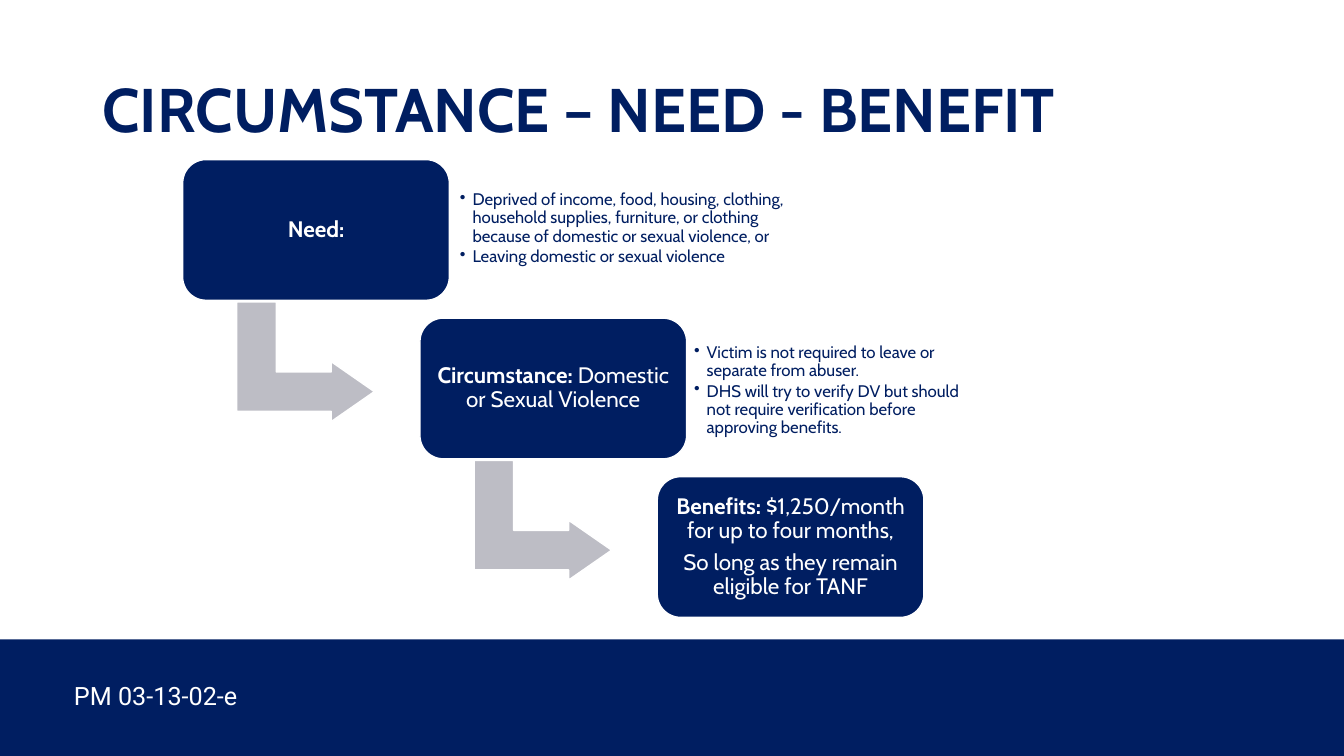
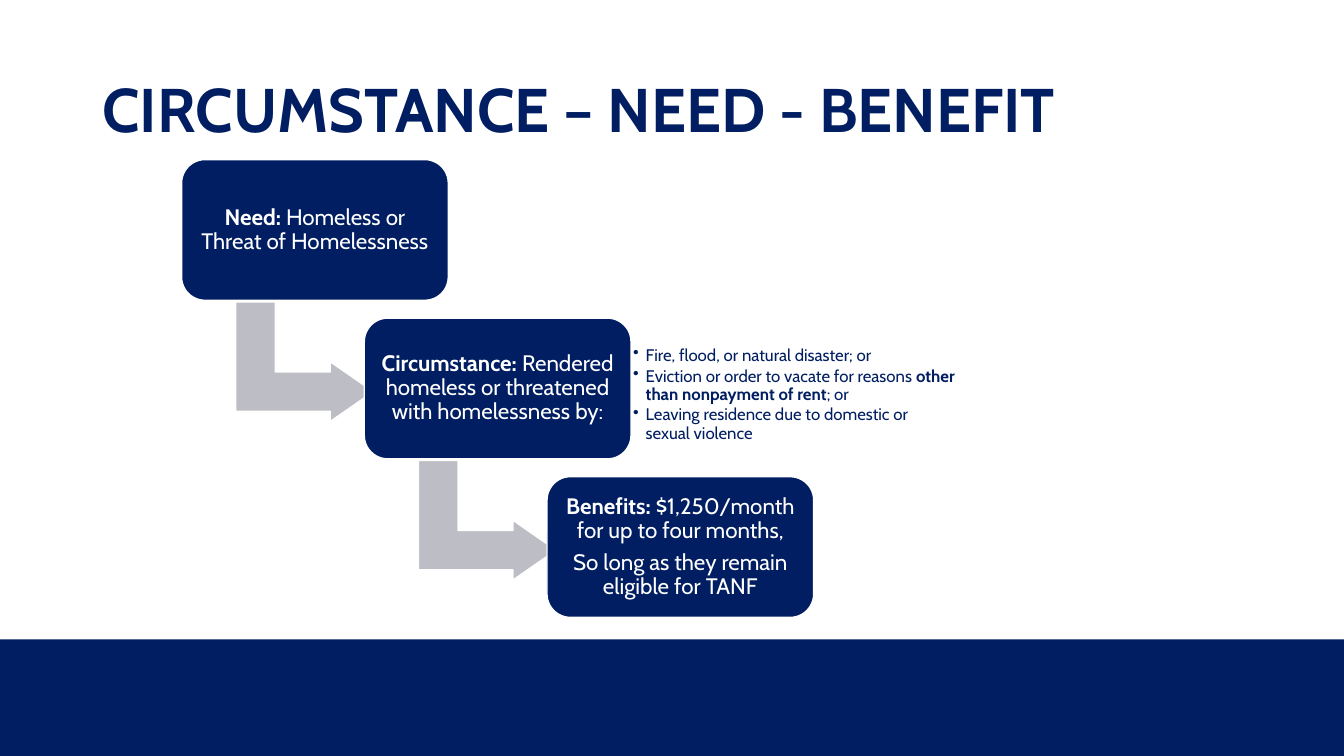
from dataclasses import dataclass
from typing import Optional

from lxml.etree import SubElement
from pptx import Presentation
from pptx.dml.color import RGBColor
from pptx.enum.shapes import MSO_SHAPE as Preset
from pptx.enum.text import MSO_ANCHOR as Anchor, MSO_AUTO_SIZE as AutoSize, PP_ALIGN as Align
from pptx.oxml.ns import qn
from pptx.util import Pt

PX = 9525  # EMU in one px, at 96 px to the inch
SLIDE_WIDTH, SLIDE_HEIGHT = 1280, 720
COLORS = {"navy": "001E61", "gray": "BDBDC5", "white": "FFFFFF"}
HEADING_FONT, FOOTER_FONT = "Cabin", "Roboto"
TITLE = "CIRCUMSTANCE – NEED - BENEFIT"

BAND_TOP = 609
STEP_TOP, STEP_PITCH = 152, 151
STEP_WIDTH, STEP_HEIGHT = 254, 134
ARROW_DX, ARROW_DY = 60, 127
ARROW_WIDTH, ARROW_HEIGHT = 114, 131
ARROW_ADJUSTMENTS = (0.33, 0.25, 0.36)
INSET = 7
BULLET_INDENT = 12


@dataclass(frozen=True)
class Span:
    text: str
    bold: bool = False


Paragraphs = tuple[tuple[Span, ...], ...]


@dataclass(frozen=True)
class Details:
    left: int
    top: int
    width: int
    bullets: Paragraphs
    height: int = 108


@dataclass(frozen=True)
class Step:
    text: Paragraphs
    details: Optional[Details] = None


@dataclass(frozen=True)
class Process:
    left: int
    step_shift: int
    steps: tuple[Step, ...]
    reference: str = ""


BENEFITS = Step((
    (Span("Benefits: ", True), Span("$1,250/month for up to four months,")),
    (Span("So long as they remain eligible for TANF"),),
))

PROCESSES = (
    Process(174, 226, (
        Step(((Span("Need:", True),),), Details(431, 164, 355, (
            (Span("Deprived of income, food, housing, clothing, household supplies, "
                  "furniture, or clothing because of domestic or sexual violence, or"),),
            (Span("Leaving domestic or sexual violence"),),
        ))),
        Step(((Span("Circumstance: ", True), Span("Domestic or Sexual Violence")),),
             Details(654, 318, 290, (
                 (Span("Victim is not required to leave or separate from abuser."),),
                 (Span("DHS will try to verify DV but should not require verification "
                       "before approving benefits."),),
             ))),
        BENEFITS,
    ), "PM 03-13-02-e"),
    Process(173, 174, (
        Step(((Span("Need: ", True), Span("Homeless or Threat of Homelessness")),)),
        Step(((Span("Circumstance: ", True),
               Span("Rendered homeless or threatened with homelessness by:")),),
             Details(596, 322, 321, (
                 (Span("Fire, flood, or natural disaster; or"),),
                 (Span("Eviction or order to vacate for reasons "),
                  Span("other than nonpayment of rent", True), Span("; or")),
                 (Span("Leaving residence due to domestic or sexual violence"),),
             ))),
        BENEFITS,
    )),
)


def box(left: int, top: int, width: int, height: int) -> tuple[int, ...]:
    return tuple(length * PX for length in (left, top, width, height))


def rgb(color: str) -> RGBColor:
    return RGBColor.from_string(COLORS[color])


def set_font(paragraph, name: str, size: int, color: str) -> None:
    paragraph.font.name = name
    paragraph.font.size = Pt(size)
    paragraph.font.color.rgb = rgb(color)


def add_bullet(paragraph) -> None:
    properties = paragraph._p.get_or_add_pPr()
    properties.set("marL", str(BULLET_INDENT * PX))
    properties.set("indent", str(-BULLET_INDENT * PX))
    SubElement(properties, qn("a:buChar")).set("char", "•")


def write(frame, paragraphs: Paragraphs, size: int, color: str,
          space_after: float, bulleted: bool = False) -> None:
    """Fill a step or its details with vertically centred text."""
    frame.word_wrap = True
    frame.vertical_anchor = Anchor.MIDDLE
    frame.margin_left = frame.margin_right = INSET * PX
    frame.margin_top = frame.margin_bottom = INSET * PX
    for index, spans in enumerate(paragraphs):
        paragraph = frame.add_paragraph() if index else frame.paragraphs[0]
        paragraph.alignment = Align.LEFT if bulleted else Align.CENTER
        paragraph.line_spacing = 0.9
        paragraph.space_after = Pt(space_after)
        if bulleted:
            add_bullet(paragraph)
        set_font(paragraph, HEADING_FONT, size, color)
        for span in spans:
            run = paragraph.add_run()
            run.text = span.text
            run.font.bold = span.bold


def add_preset(slide, preset: Preset, frame: tuple[int, ...], color: str, outlined: bool = True):
    shape = slide.shapes.add_shape(preset, *frame)
    shape.shadow.inherit = False
    shape.fill.solid()
    shape.fill.fore_color.rgb = rgb(color)
    if outlined:
        shape.line.color.rgb = rgb("white")
        shape.line.width = Pt(1)
    else:
        shape.line.fill.background()
    return shape


def add_layout_band(layout, slide) -> None:
    """Draw the bottom band on a slide, then move it behind the layout's shapes."""
    frame = box(0, BAND_TOP, SLIDE_WIDTH, SLIDE_HEIGHT - BAND_TOP)
    band = add_preset(slide, Preset.RECTANGLE, frame, "navy", outlined=False)
    layout.shapes[0].element.addprevious(band.element)


def set_title(slide) -> None:
    title = slide.shapes.title
    title.left, title.top, title.width, title.height = box(88, 38, 1104, 139)
    frame = title.text_frame
    frame.text = TITLE
    frame.auto_size = AutoSize.NONE
    frame.vertical_anchor = Anchor.MIDDLE
    paragraph = frame.paragraphs[0]
    paragraph.alignment = Align.LEFT
    paragraph.line_spacing = 0.9
    set_font(paragraph, HEADING_FONT, 44, "navy")
    paragraph.font.bold = True


def add_reference(slide, text: str) -> None:
    frame = slide.shapes.add_textbox(*box(61, 643, 640, 38)).text_frame
    frame.word_wrap = True
    frame.text = text
    set_font(frame.paragraphs[0], FOOTER_FONT, 18, "white")


def add_arrow(slide, left: int, top: int) -> None:
    arrow = add_preset(slide, Preset.BENT_UP_ARROW,
                       box(left, top, ARROW_WIDTH, ARROW_HEIGHT), "gray")
    arrow.rotation = 90
    for index, value in enumerate(ARROW_ADJUSTMENTS):
        arrow.adjustments[index] = value


def add_process(slide, process: Process) -> None:
    for index, step in enumerate(process.steps):
        left = process.left + index * process.step_shift
        top = STEP_TOP + index * STEP_PITCH
        if index < len(process.steps) - 1:
            add_arrow(slide, left + ARROW_DX, top + ARROW_DY)
        card = add_preset(slide, Preset.ROUNDED_RECTANGLE,
                          box(left, top, STEP_WIDTH, STEP_HEIGHT), "navy")
        write(card.text_frame, step.text, 16, "white", space_after=5.6)
        details = step.details
        if details:
            frame = box(details.left, details.top, details.width, details.height)
            textbox = slide.shapes.add_textbox(*frame)
            write(textbox.text_frame, details.bullets, 12, "navy",
                  space_after=1.8, bulleted=True)


def main() -> None:
    presentation = Presentation()
    presentation.slide_width = SLIDE_WIDTH * PX
    presentation.slide_height = SLIDE_HEIGHT * PX
    layout = presentation.slide_layouts.get_by_name("Title Only")
    for index, process in enumerate(PROCESSES):
        slide = presentation.slides.add_slide(layout)
        if index == 0:
            add_layout_band(layout, slide)
        set_title(slide)
        if process.reference:
            add_reference(slide, process.reference)
        add_process(slide, process)
    presentation.save("out.pptx")


if __name__ == "__main__":
    main()
